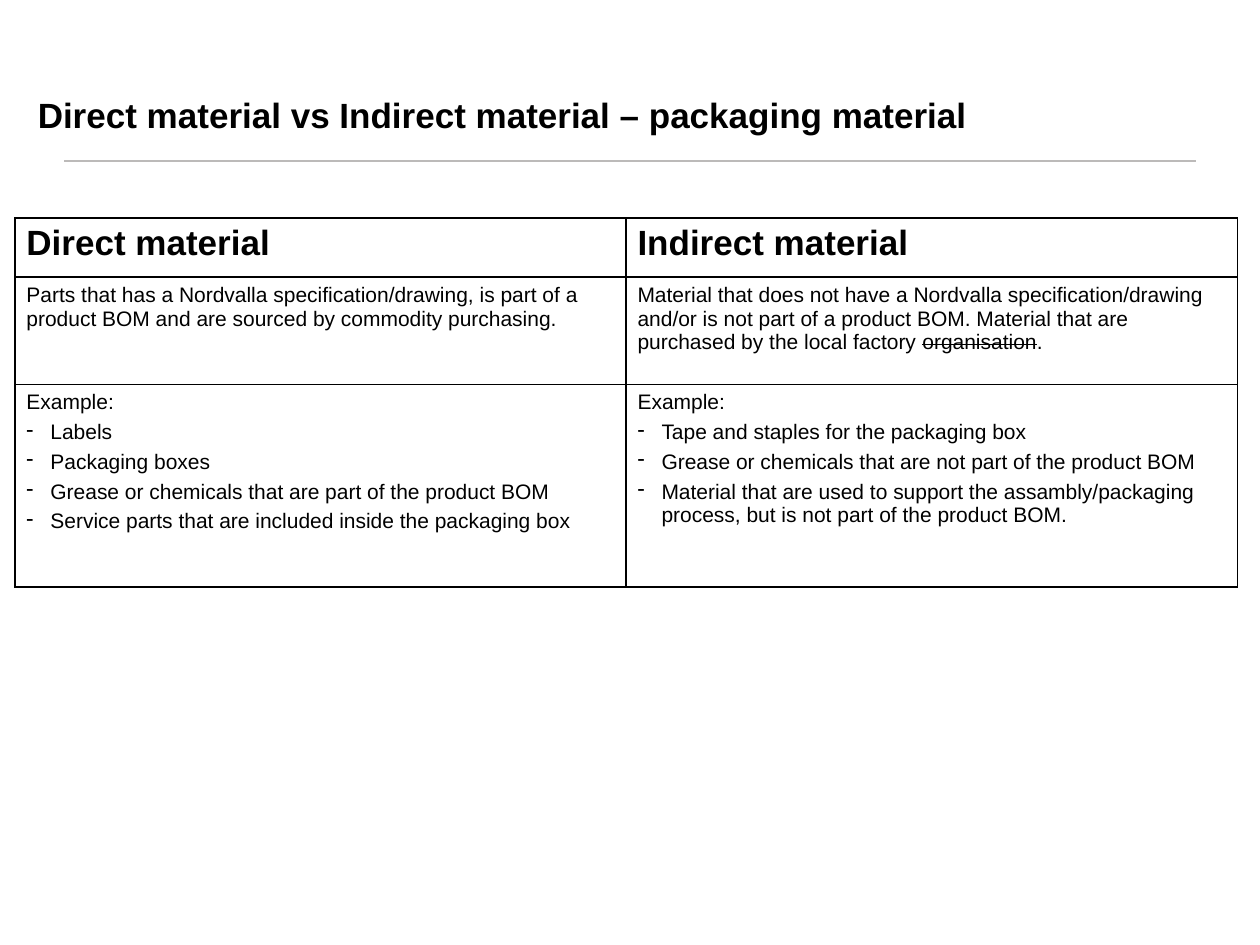
from lxml.etree import SubElement
from pptx import Presentation
from pptx.dml.color import RGBColor
from pptx.enum.shapes import MSO_CONNECTOR
from pptx.oxml.ns import qn
from pptx.util import Inches, Pt

TITLE = "Direct material vs Indirect material – packaging material"
HEADINGS = ["Direct material", "Indirect material"]
# Each definition is a list of (text, struck through)
DEFINITIONS = [
    [("Parts that has a Nordvalla specification/drawing, is part of a product BOM "
      "and are sourced by commodity purchasing.", False)],
    [("Material that does not have a Nordvalla specification/drawing and/or is not part "
      "of a product BOM. Material that are purchased by the local factory ", False),
     ("organisation", True), (".", False)],
]
EXAMPLES = [
    ["Labels", "Packaging boxes",
     "Grease or chemicals that are part of the product BOM",
     "Service parts that are included inside the packaging box"],
    ["Tape and staples for the packaging box",
     "Grease or chemicals that are not part of the product BOM",
     "Material that are used to support the assambly/packaging process, "
     "but is not part of the product BOM."],
]
COLUMN_WIDTH = 4.85
ROW_HEIGHTS = [0.47, 0.85, 1.61]
BLACK, WHITE, GREY = "000000", "FFFFFF", "BCBAB9"


def color(value):
    return RGBColor.from_string(value)


def style(paragraph, size, bold=False):
    font = paragraph.font
    font.name, font.size, font.bold = "Arial", Pt(size), bold
    font.color.rgb = color(BLACK)


def add_dash(paragraph):
    props = paragraph._p.get_or_add_pPr()
    props.set("marL", str(Inches(0.19)))
    props.set("indent", str(-Inches(0.19)))
    paragraph.space_before = Pt(3.6)
    SubElement(props, qn("a:buChar"), char="-")


def frame_cell(cell):
    cell.margin_left = cell.margin_right = Inches(0.09)
    cell.margin_top = cell.margin_bottom = Inches(0.05)
    props = cell._tc.get_or_add_tcPr()
    for side in ("lnL", "lnR", "lnT", "lnB"):
        border = SubElement(props, qn(f"a:{side}"), w=str(Pt(1)))
        fill = SubElement(border, qn("a:solidFill"))
        SubElement(fill, qn("a:srgbClr"), val=BLACK)
    cell.fill.solid()
    cell.fill.fore_color.rgb = color(WHITE)


prs = Presentation()
prs.slide_width, prs.slide_height = Inches(10), Inches(7.5)
slide = prs.slides.add_slide(prs.slide_layouts[6])
shapes = slide.shapes

# Rule under the title
rule = shapes.add_connector(MSO_CONNECTOR.STRAIGHT, Inches(0.51), Inches(1.28),
                            Inches(9.49), Inches(1.28))
rule.line.color.rgb = color(GREY)
rule.line.width = Pt(1)
SubElement(rule._element.spPr, qn("a:effectLst"))

# Comparison table
table = shapes.add_table(len(ROW_HEIGHTS), len(HEADINGS), Inches(0.12), Inches(1.73),
                         Inches(COLUMN_WIDTH * len(HEADINGS)),
                         Inches(sum(ROW_HEIGHTS))).table
for row, height in zip(table.rows, ROW_HEIGHTS):
    row.height = Inches(height)
for column in table.columns:
    column.width = Inches(COLUMN_WIDTH)
for cell in table.iter_cells():
    frame_cell(cell)

for col, (heading, definition, examples) in enumerate(zip(HEADINGS, DEFINITIONS, EXAMPLES)):
    heading_frame, definition_frame, example_frame = (
        table.cell(row, col).text_frame for row in range(len(ROW_HEIGHTS)))

    heading_frame.text = heading
    style(heading_frame.paragraphs[0], 20, bold=True)

    sentence = definition_frame.paragraphs[0]
    style(sentence, 12)
    for text, struck in definition:
        run = sentence.add_run()
        run.text = text
        if struck:
            run._r.get_or_add_rPr().set("strike", "sngStrike")

    example_frame.text = "Example:"
    style(example_frame.paragraphs[0], 12)
    for example in examples:
        item = example_frame.add_paragraph()
        item.text = example
        add_dash(item)
        style(item, 12)

# Title
title = shapes.add_textbox(Inches(0.3), Inches(0.56), Inches(8.9), Inches(0.66)).text_frame
title.word_wrap = True
title.margin_left = title.margin_right = title.margin_bottom = 0
title.margin_top = Inches(0.18)
title.text = TITLE
style(title.paragraphs[0], 20, bold=True)

prs.save("out.pptx")
